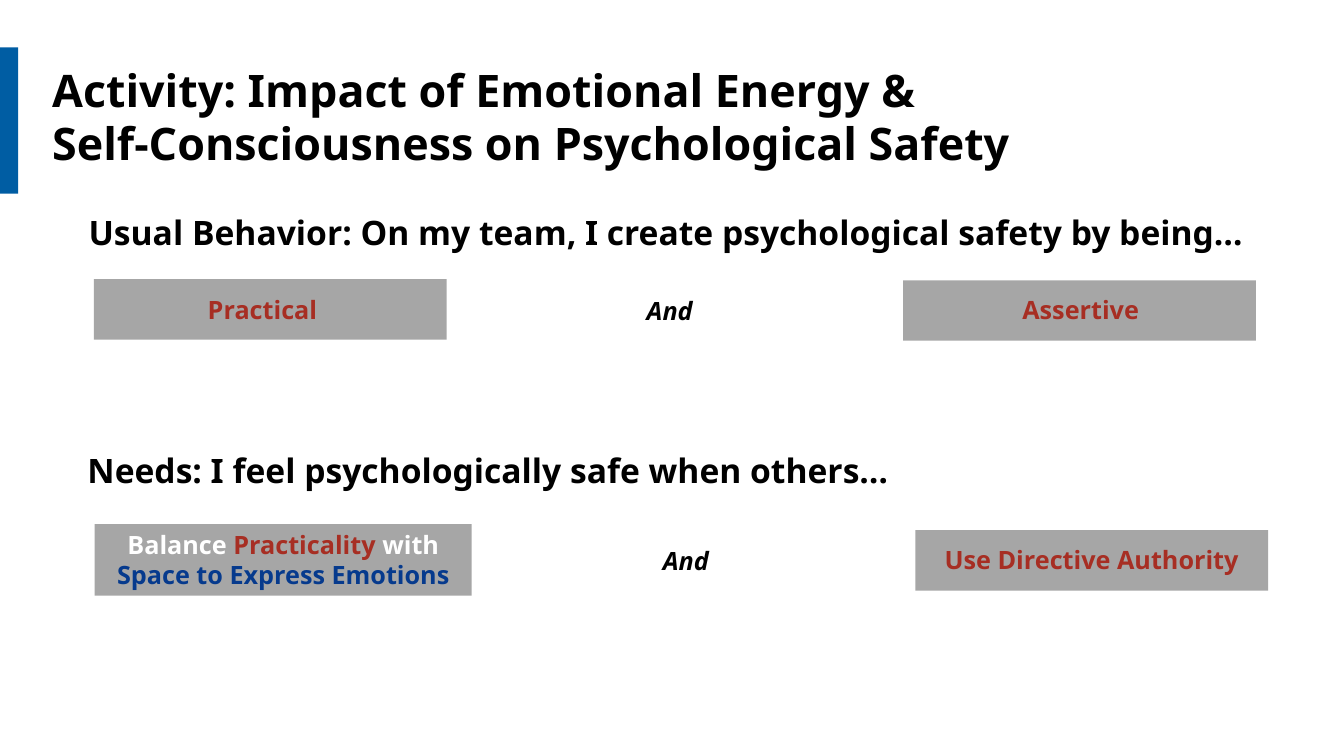
from dataclasses import dataclass

from pptx import Presentation
from pptx.dml.color import RGBColor
from pptx.enum.shapes import MSO_SHAPE
from pptx.enum.text import MSO_ANCHOR, PP_ALIGN
from pptx.slide import Slide
from pptx.util import Pt

RECT = MSO_SHAPE.RECTANGLE
TOP, MIDDLE = MSO_ANCHOR.TOP, MSO_ANCHOR.MIDDLE
LEFT, CENTER = PP_ALIGN.LEFT, PP_ALIGN.CENTER

FONT = "Noto Sans"
BLACK = RGBColor(0x00, 0x00, 0x00)
WHITE = RGBColor(0xFF, 0xFF, 0xFF)
GRAY = RGBColor(0xA6, 0xA6, 0xA6)
RED = RGBColor(0xA7, 0x2E, 0x23)
NAVY = RGBColor(0x06, 0x3A, 0x8D)
BLUE = RGBColor(0x00, 0x5D, 0xA3)


@dataclass
class Bar:
    left: float
    top: float
    width: float
    height: float
    fill: RGBColor = GRAY


@dataclass
class Label:
    left: float
    top: float
    width: float
    height: float
    lines: list[list[tuple[str, RGBColor]]]
    size: float = 18
    align: PP_ALIGN = CENTER
    anchor: MSO_ANCHOR = TOP
    italic: bool = False


BARS = [
    Bar(0, 33.8, 13, 104.5, BLUE),
    Bar(67, 199.4, 252, 43.2),
    Bar(645.1, 200.2, 252, 43.2),
    Bar(67.7, 374.4, 269.3, 51.1),
    Bar(653.8, 378.7, 252, 43.2),
]

LABELS = [
    # Title and section headings
    Label(30.2, 41, 763.2, 85,
          [[("Activity: Impact of Emotional Energy &", BLACK)],
           [("Self-Consciousness on Psychological Safety", BLACK)]],
          32, LEFT),
    Label(56.2, 147.6, 878.4, 36,
          [[("Usual Behavior: On my team, I create psychological "
             "safety by being…", BLACK)]], 24, LEFT),
    Label(55.4, 317.5, 745.9, 36,
          [[("Needs: I feel psychologically safe when others…", BLACK)]],
          24, LEFT),
    # Usual behavior
    Label(102.2, 206.6, 170.6, 28.8, [[("Practical", RED)]]),
    Label(339.1, 198.7, 278.6, 45.4, [[("And", BLACK)]],
          anchor=MIDDLE, italic=True),
    Label(646.6, 206.6, 250.6, 28.8, [[("Assertive", RED)]]),
    # Needs
    Label(67.7, 374.4, 269.3, 51.1,
          [[("Balance", WHITE), (" Practicality ", RED), ("with ", WHITE),
            ("Space to Express Emotions", NAVY)]]),
    Label(350.6, 377.3, 278.6, 45.4, [[("And", BLACK)]],
          anchor=MIDDLE, italic=True),
    Label(640.8, 385.2, 277.9, 28.8, [[("Use Directive Authority", RED)]]),
]


def draw_bar(slide: Slide, bar: Bar) -> None:
    shape = slide.shapes.add_shape(
        RECT, Pt(bar.left), Pt(bar.top), Pt(bar.width), Pt(bar.height))
    shape.shadow.inherit = False
    shape.fill.solid()
    shape.fill.fore_color.rgb = bar.fill
    shape.line.fill.background()


def draw_label(slide: Slide, label: Label) -> None:
    box = slide.shapes.add_textbox(
        Pt(label.left), Pt(label.top), Pt(label.width), Pt(label.height))
    frame = box.text_frame
    frame.word_wrap = True
    frame.vertical_anchor = label.anchor
    frame.text = "\n".join("" for _ in label.lines)
    for para, line in zip(frame.paragraphs, label.lines):
        para.alignment = label.align
        for text, color in line:
            run = para.add_run()
            run.text = text
            font = run.font
            font.name, font.size = FONT, Pt(label.size)
            font.bold, font.italic = True, label.italic
            font.color.rgb = color


def main() -> None:
    deck = Presentation()
    deck.slide_width, deck.slide_height = Pt(960), Pt(540)
    slide = deck.slides.add_slide(deck.slide_layouts[6])
    for bar in BARS:
        draw_bar(slide, bar)
    for label in LABELS:
        draw_label(slide, label)
    deck.save("out.pptx")


if __name__ == "__main__":
    main()
